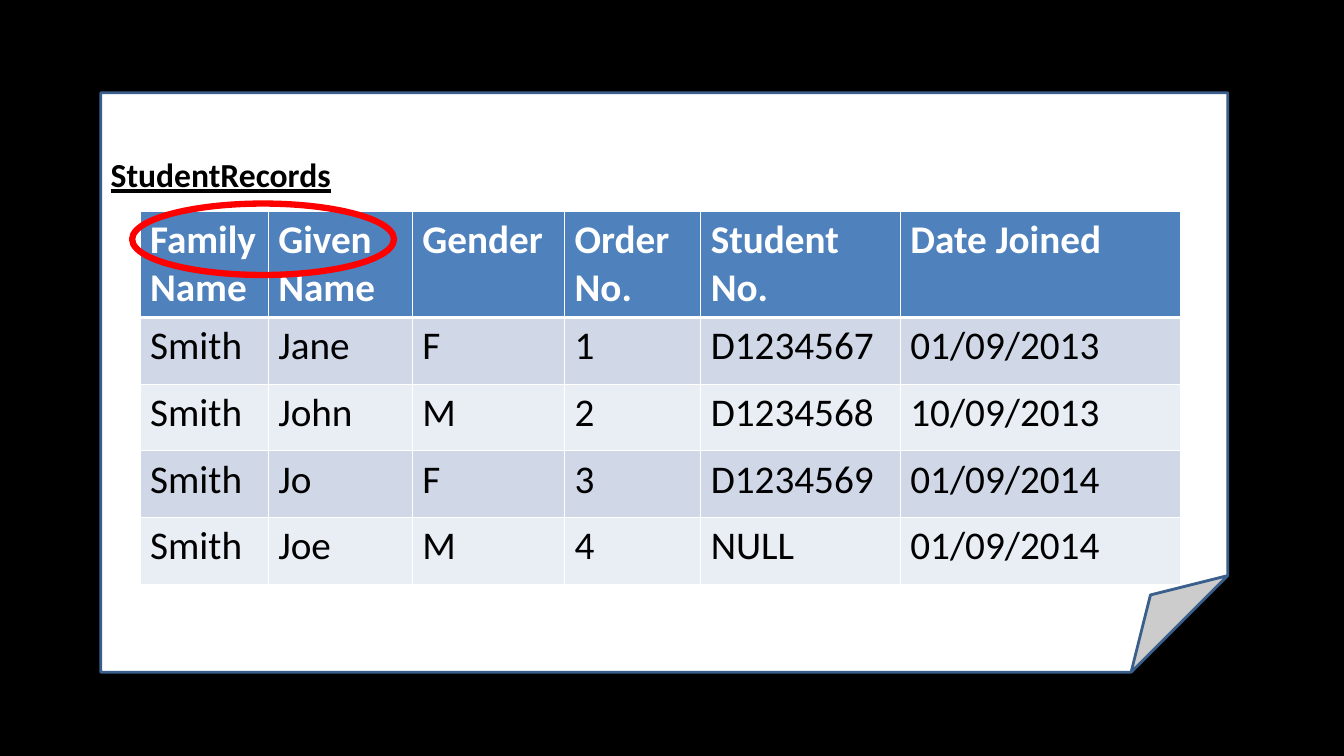
"""Build a slide showing the StudentRecords table on a folded sheet."""
from lxml import etree
from pptx import Presentation
from pptx.dml.color import RGBColor
from pptx.enum.shapes import MSO_SHAPE
from pptx.enum.text import MSO_ANCHOR, PP_ALIGN
from pptx.oxml.ns import qn
from pptx.util import Cm, Pt

FOLDED_CORNER, OVAL = MSO_SHAPE.FOLDED_CORNER, MSO_SHAPE.OVAL
TOP, LEFT = MSO_ANCHOR.TOP, PP_ALIGN.LEFT

TITLE = "StudentRecords"
RECORDS = [
    ("Family Name", "Given Name", "Gender", "Order No.", "Student No.", "Date Joined"),
    ("Smith", "Jane", "F", "1", "D1234567", "01/09/2013"),
    ("Smith", "John", "M", "2", "D1234568", "10/09/2013"),
    ("Smith", "Jo", "F", "3", "D1234569", "01/09/2014"),
    ("Smith", "Joe", "M", "4", "NULL", "01/09/2014"),
]
COLUMN_WIDTHS = [3.23, 3.63, 3.84, 3.43, 5.03, 7.06]
ROW_HEIGHTS = [2.51] + [1.68] * (len(RECORDS) - 1)
SHEET_BOX = (2.54, 2.34, 28.4, 14.6)
TABLE_ORIGIN = (3.53, 5.33)
HIGHLIGHT_BOX = (3.33, 5.13, 6.6, 1.8)

THEME = {
    "font": "Calibri", "title_size": 24, "table_size": 28,
    "black": "000000", "white": "FFFFFF", "outline": "3A5F8C",
    "header": "4F81BD", "bands": ("D0D8E8", "E9EDF4"), "highlight": "FF0000",
}


def color(value):
    return RGBColor.from_string(value)


def set_attributes(target, values):
    for name, value in values.items():
        setattr(target, name, value)


def write(paragraph, text, size, font_color, **formats):
    run = paragraph.add_run()
    run.text = text
    set_attributes(run.font, {"name": THEME["font"], "size": Pt(size), **formats})
    run.font.color.rgb = color(font_color)


def add_outlined_shape(slide, kind, box, fill, line, width):
    shape = slide.shapes.add_shape(kind, *map(Cm, box))
    shape.shadow.inherit = False
    if fill:
        shape.fill.solid()
        shape.fill.fore_color.rgb = color(fill)
    else:
        shape.fill.background()
    shape.line.color.rgb = color(line)
    shape.line.width = Pt(width)
    return shape


def set_borders(cell, widths):
    properties = cell._tc.get_or_add_tcPr()
    for side, width in zip("LRTB", widths):
        line = etree.SubElement(properties, qn(f"a:ln{side}"), w=str(Pt(width)))
        fill = etree.SubElement(line, qn("a:solidFill"))
        etree.SubElement(fill, qn("a:srgbClr"), val=THEME["white"])


def add_sheet(slide):
    sheet = add_outlined_shape(slide, FOLDED_CORNER, SHEET_BOX,
                               THEME["white"], THEME["outline"], 2)
    frame = sheet.text_frame
    set_attributes(frame, {"word_wrap": True, "vertical_anchor": TOP,
                           "margin_top": Cm(1.54)})
    paragraph = frame.paragraphs[0]
    paragraph.alignment = LEFT
    write(paragraph, TITLE, THEME["title_size"], THEME["black"],
          bold=True, underline=True)


def add_records(slide):
    box = (*TABLE_ORIGIN, sum(COLUMN_WIDTHS), sum(ROW_HEIGHTS))
    table = slide.shapes.add_table(len(RECORDS), len(COLUMN_WIDTHS),
                                   *map(Cm, box)).table
    for column, width in zip(table.columns, COLUMN_WIDTHS):
        column.width = Cm(width)
    for row, height in zip(table.rows, ROW_HEIGHTS):
        row.height = Cm(height)
    for index, record in enumerate(RECORDS):
        is_header = index == 0
        fill = THEME["header"] if is_header else THEME["bands"][(index - 1) % 2]
        font_color = THEME["white"] if is_header else THEME["black"]
        borders = (1, 1, 3 if index == 1 else 1, 3 if is_header else 1)
        for position, text in enumerate(record):
            cell = table.cell(index, position)
            set_borders(cell, borders)
            cell.fill.solid()
            cell.fill.fore_color.rgb = color(fill)
            write(cell.text_frame.paragraphs[0], text, THEME["table_size"],
                  font_color, bold=is_header)


def main():
    presentation = Presentation()
    set_attributes(presentation, {"slide_width": Cm(33.87), "slide_height": Cm(19.05)})
    slide = presentation.slides.add_slide(presentation.slide_layouts[6])
    slide.background.fill.solid()
    slide.background.fill.fore_color.rgb = color(THEME["black"])
    add_sheet(slide)
    add_records(slide)
    add_outlined_shape(slide, OVAL, HIGHLIGHT_BOX, None, THEME["highlight"], 4.5)
    presentation.save("out.pptx")


if __name__ == "__main__":
    main()
